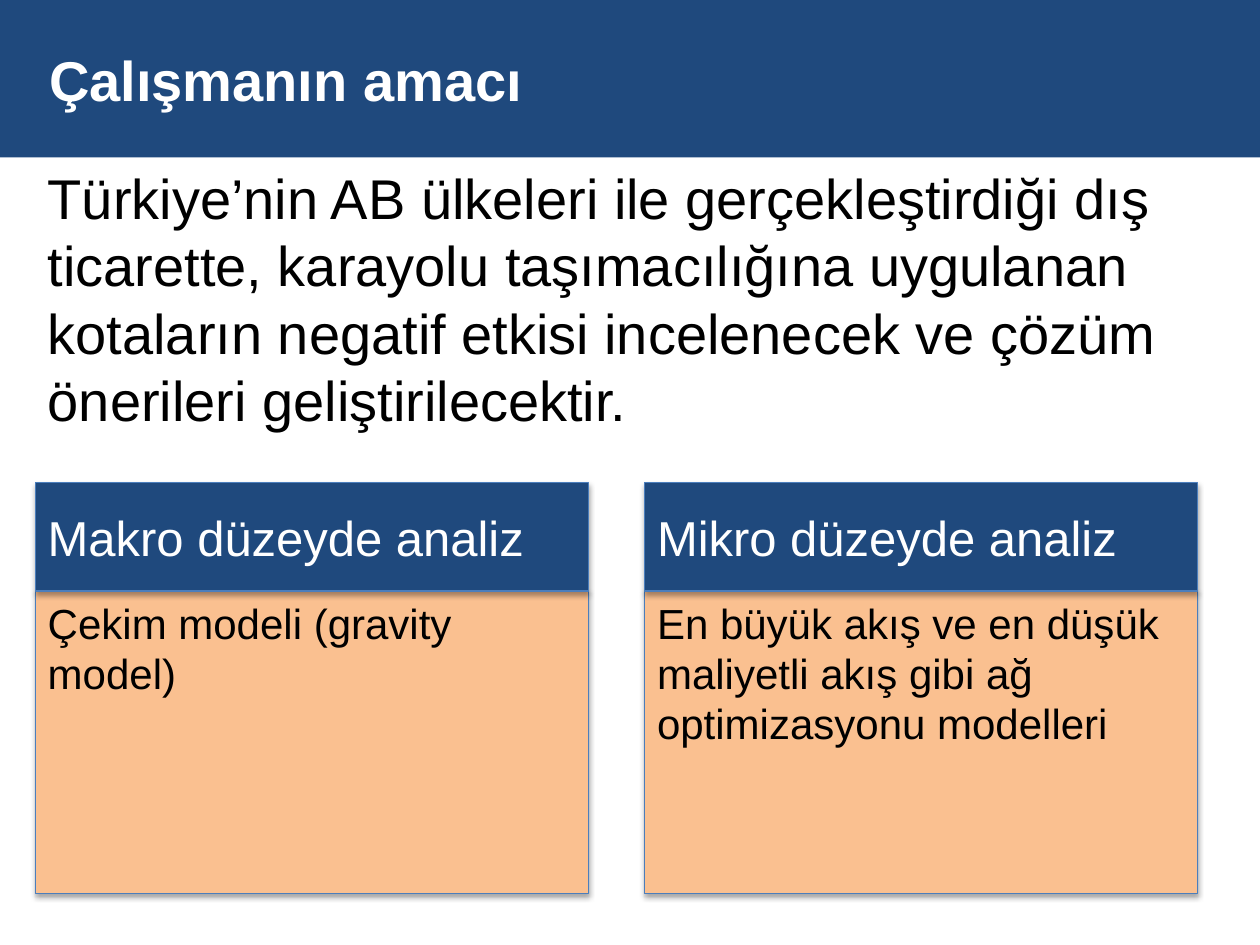
from lxml import etree
from pptx import Presentation
from pptx.dml.color import RGBColor
from pptx.enum import shapes, text
from pptx.oxml.ns import qn
from pptx.util import Pt

NAVY = RGBColor(0x1F, 0x49, 0x7D)
PEACH = RGBColor(0xFA, 0xC0, 0x90)
EDGE = RGBColor(0x4B, 0x7E, 0xBC)
WHITE = RGBColor(0xFF, 0xFF, 0xFF)
BLACK = RGBColor(0, 0, 0)

TITLE = "Çalışmanın amacı"
AIM = ("Türkiye’nin AB ülkeleri ile gerçekleştirdiği dış ticarette, karayolu "
       "taşımacılığına uygulanan kotaların negatif etkisi incelenecek ve çözüm "
       "önerileri geliştirilecektir.")
ANALYSES = [
    ("Makro düzeyde analiz", "Çekim modeli (gravity model)"),
    ("Mikro düzeyde analiz",
     "En büyük akış ve en düşük maliyetli akış gibi ağ optimizasyonu modelleri"),
]

SLIDE_W, SLIDE_H = 720, 540
TITLE_H = 90
LEFT = 20.2
CARD_W, CARD_STEP = 316, 348.2
HEAD_TOP, HEAD_H, DETAIL_H = 275.8, 61.9, 172.8


def write(s, content, size, color, bold=False, anchor=text.MSO_ANCHOR.TOP):
    tf = s.text_frame
    tf.word_wrap = True
    tf.vertical_anchor = anchor
    p = tf.paragraphs[0]
    p.alignment = text.PP_ALIGN.LEFT
    r = p.add_run()
    r.text = content
    r.font.name = "Arial"
    r.font.size = Pt(size)
    r.font.bold = bold
    r.font.color.rgb = color


def add_rect(slide, box, fill):
    s = slide.shapes.add_shape(shapes.MSO_SHAPE.RECTANGLE, *map(Pt, box))
    s.shadow.inherit = False
    s.fill.solid()
    s.fill.fore_color.rgb = fill
    s.line.fill.background()
    return s


def add_panel(slide, box, fill):
    """Rectangle with a thin edge and a soft shadow below it."""
    s = add_rect(slide, box, fill)
    s.line.color.rgb = EDGE
    s.line.width = Pt(0.75)
    effects = s._element.spPr.find(qn("a:effectLst"))
    shadow = etree.SubElement(effects, qn("a:outerShdw"), blurRad=str(Pt(3.1)),
                              dist=str(Pt(1.8)), dir="5400000", rotWithShape="0")
    color = etree.SubElement(shadow, qn("a:srgbClr"), val="000000")
    etree.SubElement(color, qn("a:alpha"), val="35000")
    return s


def main():
    prs = Presentation()
    prs.slide_width, prs.slide_height = Pt(SLIDE_W), Pt(SLIDE_H)
    slide = prs.slides.add_slide(prs.slide_layouts[6])

    banner = add_rect(slide, (0, 0, SLIDE_W, TITLE_H), NAVY)
    write(banner, TITLE, 32, WHITE, bold=True, anchor=text.MSO_ANCHOR.MIDDLE)
    banner.text_frame.margin_left = Pt(28.1)

    aim = slide.shapes.add_textbox(Pt(LEFT), Pt(TITLE_H), Pt(SLIDE_W - 2 * LEFT),
                                   Pt(SLIDE_H - TITLE_H))
    write(aim, AIM, 32, BLACK)

    lefts = [LEFT + i * CARD_STEP for i in range(len(ANALYSES))]
    for x, (_, detail) in zip(lefts, ANALYSES):
        s = add_panel(slide, (x, HEAD_TOP + HEAD_H, CARD_W, DETAIL_H), PEACH)
        write(s, detail, 24, BLACK)
    for x, (heading, _) in zip(lefts, ANALYSES):
        s = add_panel(slide, (x, HEAD_TOP, CARD_W, HEAD_H), NAVY)
        write(s, heading, 28, WHITE, anchor=text.MSO_ANCHOR.MIDDLE)

    prs.save("out.pptx")


if __name__ == "__main__":
    main()
